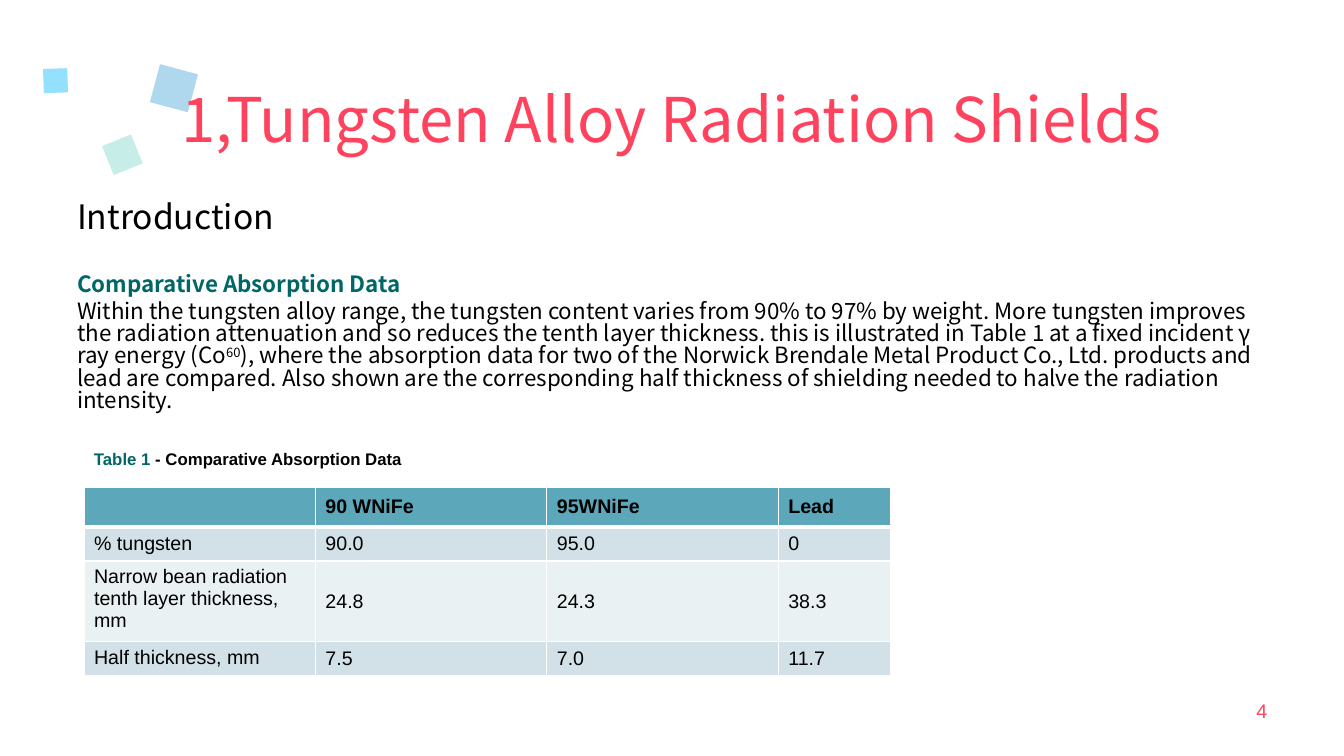
from lxml.etree import SubElement
from pptx import Presentation
from pptx.dml.color import RGBColor
from pptx.enum.shapes import MSO_SHAPE as Shape
from pptx.enum.text import MSO_ANCHOR as Anchor, MSO_AUTO_SIZE as AutoSize, PP_ALIGN as Align
from pptx.oxml.ns import qn
from pptx.util import Pt

SANS, ARIAL = "Noto Sans CJK SC", "Arial"
BLACK, WHITE, PINK, GREEN = "000000", "FFFFFF", "FF425D", "006666"
TITLE = "1,Tungsten Alloy Radiation Shields"
PAGE = "4"

SQUARES = [
    (76.3, 99.4, 22.3, 68, "C7EDE9"),
    (110.2, 49, 28.1, 15, "AFD7ED"),
    (31, 49, 17.3, 88, "93E0FF"),
]

BODY = [
    (0, 0.83, [("Introduction", dict(size=24))]),
    (27.8, 0.83, [("Comparative Absorption Data", dict(color=GREEN, bold=True))]),
    (3, 0.83, [
        ("Within the tungsten alloy range, the tungsten content varies from 90% to 97% by weight. "
         "More tungsten improves the radiation attenuation and so reduces the tenth layer thickness. "
         "this is illustrated in Table 1 at a fixed incident γ ray energy (Co", {}),
        ("60", dict(raised=True)),
        ("), where the absorption data for two of the Norwick Brendale Metal Product Co., Ltd. "
         "products and lead are compared. Also shown are the corresponding half thickness of "
         "shielding needed to halve the radiation intensity.", {}),
    ]),
]
CAPTION = [("Table 1 ", GREEN), ("- Comparative Absorption Data", BLACK)]

ROWS = [
    ("", "90 WNiFe", "95WNiFe", "Lead"),
    ("% tungsten", "90.0", "95.0", "0"),
    ("Narrow bean radiation tenth layer thickness, mm", "24.8", "24.3", "38.3"),
    ("Half thickness, mm", "7.5", "7.0", "11.7"),
]
COL_WIDTHS = [165.3, 165.3, 165.3, 80.6]
ROW_HEIGHTS = [24, 24, 57.6, 24]
ROW_FILLS = ["5CA7BA", "D2E1E7", "EAF1F3", "D2E1E7"]


def rgb(color):
    return RGBColor.from_string(color)


def add_run(p, text, size=16, name=SANS, color=BLACK, bold=False, raised=False):
    r = p.add_run()
    r.text = text
    for key, value in dict(size=Pt(size), name=name, bold=bold).items():
        setattr(r.font, key, value)
    r.font.color.rgb = rgb(color)
    if raised:
        r._r.get_or_add_rPr().set("baseline", "30000")


def add_box(s, x, y, w, h):
    tf = s.shapes.add_textbox(Pt(x), Pt(y), Pt(w), Pt(h)).text_frame
    tf.word_wrap = True
    return tf


def set_borders(cell, bottom, top):
    tcPr = cell._tc.get_or_add_tcPr()
    for i, (side, width) in enumerate(dict(lnL=1, lnR=1, lnT=top, lnB=bottom).items()):
        ln = tcPr.makeelement(qn("a:" + side), {"w": str(Pt(width))})
        fill = SubElement(ln, qn("a:solidFill"))
        SubElement(fill, qn("a:srgbClr"), {"val": WHITE})
        tcPr.insert(i, ln)


def add_squares(s):
    for x, y, side, angle, color in SQUARES:
        sp = s.shapes.add_shape(Shape.RECTANGLE, Pt(x), Pt(y), Pt(side), Pt(side))
        sp.rotation = angle
        sp.shadow.inherit = False
        sp.fill.solid()
        sp.fill.fore_color.rgb = rgb(color)
        sp.line.fill.background()


def add_title(s):
    title = s.shapes.title
    for key, value in dict(left=48, top=42.5, width=864, height=83.5).items():
        setattr(title, key, Pt(value))
    tf = title.text_frame
    for key, value in dict(word_wrap=True, auto_size=AutoSize.NONE,
                           vertical_anchor=Anchor.MIDDLE).items():
        setattr(tf, key, value)
    p = tf.paragraphs[0]
    p.alignment = Align.CENTER
    add_run(p, TITLE, size=44, color=PINK)
    s.shapes._spTree.append(title._element)


def add_body(s):
    tf = add_box(s, 48, 141.1, 857, 169)
    for i, (before, spacing, runs) in enumerate(BODY):
        p = tf.paragraphs[0] if i == 0 else tf.add_paragraph()
        p.space_before, p.line_spacing = Pt(before), spacing
        for text, style in runs:
            add_run(p, text, **style)


def add_data_table(s):
    table = s.shapes.add_table(len(ROWS), len(COL_WIDTHS), Pt(60), Pt(347.8),
                               Pt(sum(COL_WIDTHS)), Pt(sum(ROW_HEIGHTS))).table
    for col, width in zip(table.columns, COL_WIDTHS):
        col.width = Pt(width)
    for i, (texts, height, color) in enumerate(zip(ROWS, ROW_HEIGHTS, ROW_FILLS)):
        table.rows[i].height = Pt(height)
        for j, text in enumerate(texts):
            cell = table.cell(i, j)
            cell.fill.solid()
            cell.fill.fore_color.rgb = rgb(color)
            cell.vertical_anchor = Anchor.TOP if i and j == 0 else Anchor.MIDDLE
            set_borders(cell, bottom=3 if i == 0 else 1, top=3 if i == 1 else 1)
            add_run(cell.text_frame.paragraphs[0], text, size=14, name=ARIAL, bold=i == 0)


def main():
    prs = Presentation()
    prs.slide_width, prs.slide_height = Pt(960), Pt(540)
    s = prs.slides.add_slide(prs.slide_layouts[5])
    add_squares(s)
    add_title(s)
    add_body(s)
    caption = add_box(s, 60, 316.8, 461.5, 21.6).paragraphs[0]
    for text, color in CAPTION:
        add_run(caption, text, size=12, name=ARIAL, color=color, bold=True)
    add_data_table(s)
    page = add_box(s, 688.3, 495.8, 224, 37.5)
    page.vertical_anchor = Anchor.TOP
    page.paragraphs[0].alignment = Align.RIGHT
    add_run(page.paragraphs[0], PAGE, size=14, name=ARIAL, color=PINK)
    prs.save("out.pptx")


if __name__ == "__main__":
    main()
